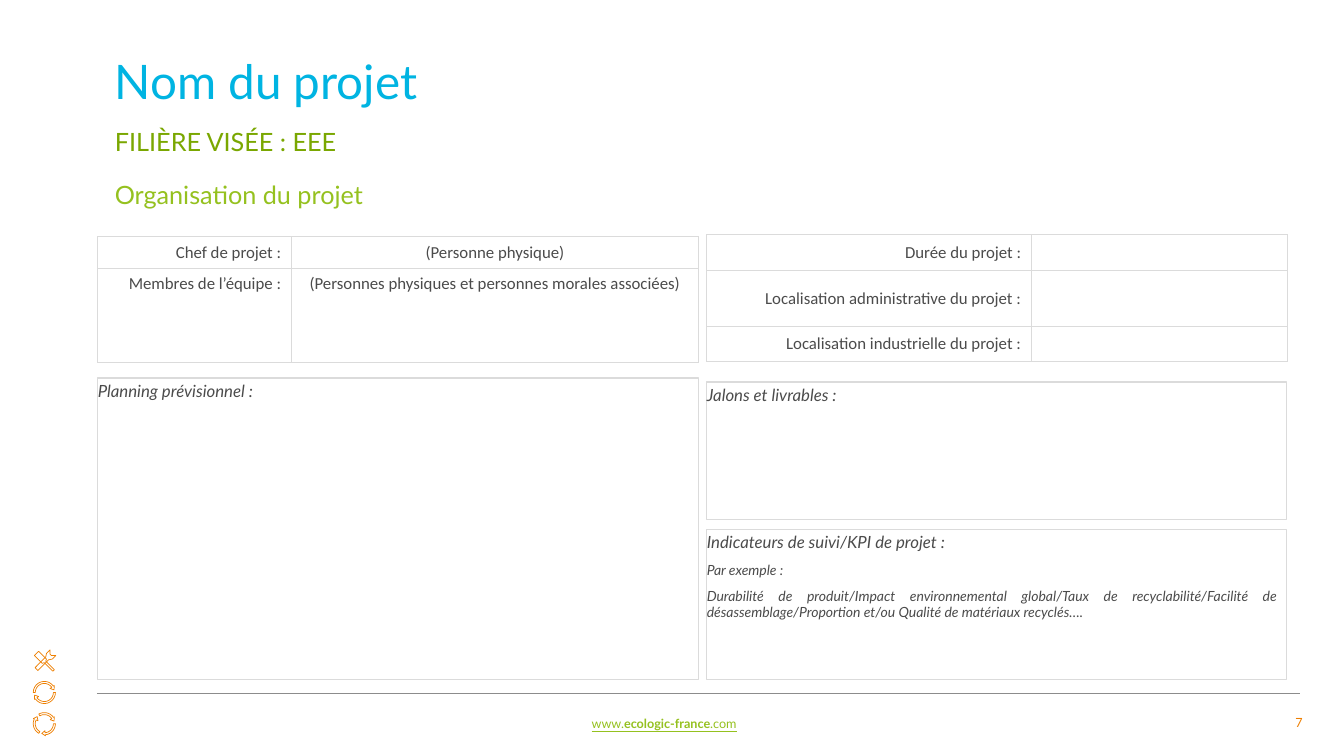
from math import cos, radians, sin

from lxml import etree
from pptx import Presentation
from pptx.dml.color import RGBColor
from pptx.enum import shapes, text
from pptx.oxml import ns
from pptx.util import Inches, Pt

COLORS = {"blue": "00B4E2", "green": "7AA701", "lime": "95C11F", "orange": "EE7F00",
          "ink": "4B4B4B", "border": "DBDBDB", "rule": "8C8C8C"}
LEFT, RIGHT = text.PP_ALIGN.LEFT, text.PP_ALIGN.RIGHT
CENTER, JUSTIFY = text.PP_ALIGN.CENTER, text.PP_ALIGN.JUSTIFY
TOP, MIDDLE = text.MSO_ANCHOR.TOP, text.MSO_ANCHOR.MIDDLE

TITLE = "Nom du projet"
SECTOR = "FILIÈRE VISÉE : EEE"
SECTION = "Organisation du projet"
SITE = [("www.", False), ("ecologic-france", True), (".com", False)]
PAGE = "7"
HEADING_X, HEADING_W = 1.04, 11.42
LEFT_X, LEFT_W = 0.97, 5.96
RIGHT_X, RIGHT_W = 7.01, 5.75
BOTTOM = 6.74

TEAM = [("Chef de projet :", "(Personne physique)"),
        ("Membres de l’équipe :", "(Personnes physiques et personnes morales associées)")]
SCOPE = [("Durée du projet :", ""),
         ("Localisation administrative du projet :", ""),
         ("Localisation industrielle du projet :", "")]
TABLES = [  # rows, left, top, column widths, row heights, row anchors, inner line
    (TEAM, LEFT_X, 2.35, (1.92, 4.04), (0.31, 0.94), (MIDDLE, TOP), 0.5),
    (SCOPE, RIGHT_X, 2.33, (3.22, 2.54), (0.35, 0.56, 0.35), (MIDDLE,) * 3, 1),
]
PANELS = [  # left, top, width, height, paragraphs with sizes
    (LEFT_X, 3.75, LEFT_W, BOTTOM - 3.75, [("Planning prévisionnel :", 12)]),
    (RIGHT_X, 3.79, RIGHT_W, 1.36, [("Jalons et livrables :", 12)]),
    (RIGHT_X, 5.25, RIGHT_W, BOTTOM - 5.25, [
        ("Indicateurs de suivi/KPI de projet :", 12),
        ("Par exemple :", 10),
        ("Durabilité de produit/Impact environnemental global/Taux de recyclabilité/"
         "Facilité de désassemblage/Proportion et/ou Qualité de matériaux recyclés….", 10)]),
]

ICON_X = 0.44
TOOLS_Y = 6.56
CYCLES = [(6.87, 2), (7.18, 3)]  # centre height, number of arrows
WRENCH = [(-0.02, 0.11), (-0.02, -0.04), (-0.04, -0.07), (-0.04, -0.12), (-0.01, -0.09),
          (0.01, -0.09), (0.04, -0.12), (0.04, -0.07), (0.02, -0.04), (0.02, 0.11)]
BRUSH = [(-0.01, 0.13), (-0.01, 0.01), (-0.03, 0), (-0.03, -0.11),
         (0.03, -0.11), (0.03, 0), (0.01, 0.01), (0.01, 0.13)]


def rgb(name):
    return RGBColor.from_string(COLORS[name])


def write(paragraph, content, size=12, color="ink", font="Lato", align=LEFT,
          bold=None, italic=None, underline=None, spacing=None, after=None):
    """Add one run to a paragraph and format both."""
    paragraph.alignment = align
    if spacing:
        paragraph.line_spacing = spacing
    if after is not None:
        paragraph.space_after = Pt(after)
    run = paragraph.add_run()
    run.text = content
    face = run.font
    face.name, face.size, face.color.rgb = font, Pt(size), rgb(color)
    face.bold, face.italic, face.underline = bold, italic, underline


def place(shape, left, top, width, height):
    shape.left, shape.top, shape.width, shape.height = map(Inches, (left, top, width, height))
    frame = shape.text_frame
    frame.word_wrap, frame.auto_size = True, text.MSO_AUTO_SIZE.NONE
    return frame


def text_box(left, top, width, height):
    return place(slide.shapes.add_textbox(0, 0, 0, 0), left, top, width, height)


def outline(shape, color, width):
    shape.shadow.inherit = False
    shape.fill.background()
    shape.line.color.rgb, shape.line.width = rgb(color), Pt(width)


def set_borders(cell, widths):
    properties = cell._tc.get_or_add_tcPr()
    for side, width in zip("LRTB", widths):
        line = etree.SubElement(properties, ns.qn(f"a:ln{side}"), w=str(Pt(width)))
        fill = etree.SubElement(line, ns.qn("a:solidFill"))
        etree.SubElement(fill, ns.qn("a:srgbClr"), val=COLORS["border"])


def add_grid(rows, left, top, columns, heights, anchors, inner):
    frame = slide.shapes.add_table(len(rows), len(columns), Inches(left), Inches(top),
                                   Inches(sum(columns)), Inches(sum(heights)))
    table = frame.table
    table.first_row = table.horz_banding = False
    for column, width in zip(table.columns, columns):
        column.width = Inches(width)
    for r, (row, height) in enumerate(zip(rows, heights)):
        table.rows[r].height = Inches(height)
        for c, content in enumerate(row):
            cell = table.cell(r, c)
            edges = (c == 0, c == len(row) - 1, r == 0, r == len(rows) - 1)
            set_borders(cell, [1 if edge else inner for edge in edges])
            cell.fill.background()
            cell.vertical_anchor = anchors[r]
            paragraph = cell.text_frame.paragraphs[0]
            if content:
                write(paragraph, content, font="Calibri", align=CENTER if c else RIGHT)
            else:
                etree.SubElement(paragraph._p, ns.qn("a:endParaRPr"), sz="1200")


def add_icon_part(points, center_y):
    points = [(Inches(ICON_X + x), Inches(center_y + y)) for x, y in points]
    builder = slide.shapes.build_freeform(*points[0])
    builder.add_line_segments(points[1:], close=True)
    outline(builder.convert_to_shape(), "orange", 0.5)


def turn(points, degrees):
    c, s = cos(radians(degrees)), sin(radians(degrees))
    return [(x * c - y * s, x * s + y * c) for x, y in points]


def arc_arrow(start, sweep):
    """Outline of a clockwise arrow bent round the origin."""
    angles = [start + sweep * i / 10 for i in range(11)]
    end = angles[-1]
    polar = [(0.11, a) for a in angles] + [(0.12, end), (0.1, end + 20), (0.07, end)]
    polar += [(0.09, a) for a in reversed(angles)]
    return [(r * cos(radians(a)), r * sin(radians(a))) for r, a in polar]


prs = Presentation()
prs.slide_width, prs.slide_height = Inches(13.33), Inches(7.5)
slide = prs.slides.add_slide(prs.slide_layouts[1])

title = place(slide.shapes.title, HEADING_X, 0.52, HEADING_W, 0.62)
title.vertical_anchor = MIDDLE
write(title.paragraphs[0], TITLE, size=34, color="blue", spacing=0.9)

sector = place(slide.placeholders[1], HEADING_X, 1.2, HEADING_W, 0.4).paragraphs[0]
sector_format = sector._p.get_or_add_pPr()
sector_format.set("marL", "0")
sector_format.set("indent", "0")
etree.SubElement(sector_format, ns.qn("a:buNone"))
sector.space_before = Pt(0)
write(sector, SECTOR, size=18, color="green")

section = text_box(HEADING_X, 1.73, HEADING_W, 0.4)
write(section.paragraphs[0], SECTION, size=18, color="lime")

for grid in TABLES:
    add_grid(*grid)

for left, top, width, height, lines in PANELS:
    panel = slide.shapes.add_shape(shapes.MSO_SHAPE.RECTANGLE, 0, 0, 0, 0)
    outline(panel, "border", 0.75)
    body = place(panel, left, top, width, height)
    body.margin_left, body.vertical_anchor = 0, TOP
    for i, (content, size) in enumerate(lines):
        paragraph = body.add_paragraph() if i else body.paragraphs[0]
        write(paragraph, content, size=size, align=JUSTIFY, italic=True, spacing=0.9, after=8)

rule = slide.shapes.add_connector(shapes.MSO_CONNECTOR.STRAIGHT, Inches(0.96), Inches(6.88),
                                  Inches(12.89), Inches(6.88))
rule.line.color.rgb, rule.line.width = rgb("rule"), Pt(0.75)
etree.SubElement(rule._element.spPr, ns.qn("a:effectLst"))

site = text_box(5.77, 7.05, 5.24, 0.25).paragraphs[0]
for part, bold in SITE:
    write(site, part, size=9, color="lime", bold=bold, underline=True)
page = text_box(12.38, 7.04, 0.64, 0.26).paragraphs[0]
write(page, PAGE, size=9, color="orange", align=RIGHT)

add_icon_part(turn(WRENCH, 45), TOOLS_Y)
add_icon_part(turn(BRUSH, -45), TOOLS_Y)
for center_y, count in CYCLES:
    step = 360 / count
    for i in range(count):
        add_icon_part(arc_arrow(i * step, step - 35), center_y)

prs.save("out.pptx")
